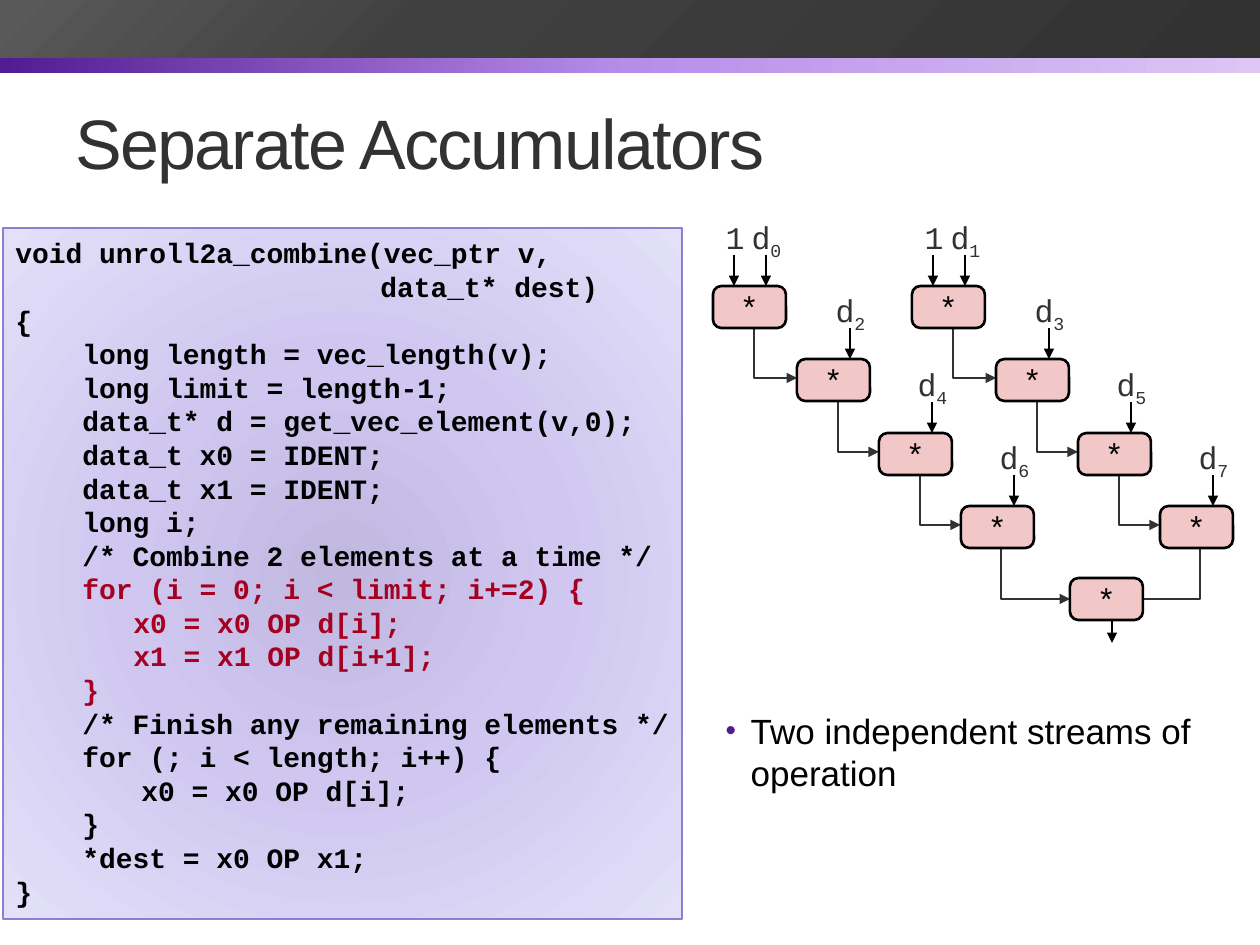
"""Build the Separate Accumulators slide with its code listing and data-flow diagram."""
from pptx import Presentation
from pptx.dml.color import RGBColor
from pptx.enum.shapes import MSO_CONNECTOR, MSO_SHAPE
from pptx.enum.text import MSO_ANCHOR, MSO_AUTO_SIZE, PP_ALIGN
from pptx.oxml import parse_xml
from pptx.oxml.ns import nsdecls
from pptx.util import Pt

PX = 914400 // 126
hex_color = RGBColor.from_string
INK, BLACK, RED = "323232", "000000", "A50021"
CODE_FONT = {"name": "Courier New", "size": Pt(16), "bold": True}
NODE_FONT = {"name": "Courier New", "size": Pt(18)}


def write(paragraph, text, color, formats):
    run = paragraph.add_run()
    run.text = text
    run.font.color.rgb = hex_color(color)
    for attribute, value in formats.items():
        setattr(run.font, attribute, value)
    return run


def add_panel(box, stops, direction):
    panel = slide.shapes.add_shape(MSO_SHAPE.RECTANGLE, *[length * PX for length in box])
    panel.shadow.inherit = False
    panel.line.fill.background()
    marks = "".join(f'<a:gs pos="{place * 1000}"><a:srgbClr val="{color}"/></a:gs>' for place, color in stops)
    gradient = f'<a:gradFill {nsdecls("a")} rotWithShape="1"><a:gsLst>{marks}</a:gsLst>{direction}</a:gradFill>'
    panel._element.spPr.insert(2, parse_xml(gradient))
    return panel


deck = Presentation()
deck.slide_width, deck.slide_height = 1260 * PX, 945 * PX
slide = deck.slides.add_slide(deck.slide_layouts[1])
title, takeaway = slide.placeholders

add_panel((0, 30, 1260, 43), [(0, "521B92"), (50, "B88DEA"), (100, "DCC6F4")], '<a:lin ang="0" scaled="0"/>')
add_panel((0, 0, 1260, 58), [(0, INK), (66, "404040"), (99, "595959")], '<a:lin ang="13500000" scaled="0"/>')

for holder, box in ((title, (63, 73, 1134, 136)), (takeaway, (713, 703, 520, 217))):
    holder.left, holder.top, holder.width, holder.height = [length * PX for length in box]
    holder.text_frame.auto_size = MSO_AUTO_SIZE.NONE
title.text_frame.vertical_anchor = MSO_ANCHOR.MIDDLE
heading = title.text_frame.paragraphs[0]
heading.alignment = PP_ALIGN.LEFT
heading_run = write(heading, "Separate Accumulators", INK, {"name": "Arial", "size": Pt(40)})
heading_run._r.get_or_add_rPr().set("spc", "-100")

point = takeaway.text_frame.paragraphs[0]
point.space_before, point.line_spacing = Pt(4), Pt(24)
write(point, "Two independent streams of operation", BLACK, {"name": "Arial", "size": Pt(20)})
bullet = point._p.get_or_add_pPr()
bullet.set("marL", str(25 * PX))
bullet.set("indent", str(-25 * PX))
for tag in ('buClr {}><a:srgbClr val="521B92"/></a:buClr>', 'buSzPct {} val="85000"/>',
            'buFont {} typeface="Arial"/>', 'buChar {} char="•"/>'):
    bullet.append(parse_xml("<a:" + tag.format(nsdecls("a"))))

code_lines = [
    (0, "void unroll2a_combine(vec_ptr v,", BLACK),
    (365, "data_t* dest)", BLACK),
    (0, "{", BLACK),
    (67, "long length = vec_length(v);", BLACK),
    (67, "long limit = length-1;", BLACK),
    (67, "data_t* d = get_vec_element(v,0);", BLACK),
    (67, "data_t x0 = IDENT;", BLACK),
    (67, "data_t x1 = IDENT;", BLACK),
    (67, "long i;", BLACK),
    (67, "/* Combine 2 elements at a time */", BLACK),
    (67, "for (i = 0; i < limit; i+=2) {", RED),
    (118, "x0 = x0 OP d[i];", RED),
    (118, "x1 = x1 OP d[i+1];", RED),
    (67, "}", RED),
    (67, "/* Finish any remaining elements */", BLACK),
    (67, "for (; i < length; i++) {", BLACK),
    (126, "x0 = x0 OP d[i];", BLACK),
    (67, "}", BLACK),
    (67, "*dest = x0 OP x1;", BLACK),
    (0, "}", BLACK),
]
listing = add_panel((3, 228, 679, 691), [(0, "C1B8E0"), (45, "CFC7F0"), (100, "E3E0F8")],
                    '<a:path path="circle"><a:fillToRect l="50000" t="50000" r="50000" b="50000"/></a:path>')
listing.line.color.rgb = hex_color("917DD0")
listing.line.width = Pt(0.75)
code = listing.text_frame
code.word_wrap = False
code.vertical_anchor = MSO_ANCHOR.TOP
code.margin_top = 8 * PX
for number, (indent, text, color) in enumerate(code_lines):
    row = code.add_paragraph() if number else code.paragraphs[0]
    row.alignment, row.line_spacing = PP_ALIGN.LEFT, Pt(19.2)
    row._p.get_or_add_pPr().set("marL", str(indent * PX))
    write(row, text, color, CODE_FONT)

NODE_W, NODE_H = 73, 42
steps = [(713, 286), (797, 359), (879, 433), (961, 506)]
result_left, result_top = 1070, 578
result_mid = result_top + NODE_H // 2
nodes, inputs, labels, elbows = [(result_left, result_top)], [(1112, 620, 643)], [], []
for stream in range(2):
    chain = [(left + 199 * stream, top) for left, top in steps]
    nodes += chain
    for step, (left, top) in enumerate(chain):
        inputs.append((left + 53, top - 31, top))
        labels.append((left + 32, top - 74, 43, "d", str(2 * step + stream)))
    first_left, first_top = chain[0]
    inputs.append((first_left + 21, first_top - 31, first_top))
    labels.append((first_left + 6, first_top - 74, 32, "1", ""))
    for (left, top), (next_left, next_top) in zip(chain, chain[1:]):
        elbows.append((left + 41, top + NODE_H, next_left, next_top + 19, True))
    last_left, last_top = chain[-1]
    entry = result_left + stream * NODE_W
    elbows.append((last_left + 40, last_top + NODE_H, entry, result_mid, stream == 0))

wires = []
for x, start, end in inputs:
    arrow = slide.shapes.add_connector(MSO_CONNECTOR.STRAIGHT, x * PX, start * PX, x * PX, end * PX)
    wires.append((arrow, BLACK, True))
for x, start, end_x, end_y, headed in elbows:
    outline = slide.shapes.build_freeform(x, start, scale=PX)
    outline.add_line_segments([(x, end_y), (end_x, end_y)], close=False)
    elbow = outline.convert_to_shape()
    elbow.fill.background()
    wires.append((elbow, INK, headed))
for wire, color, headed in wires:
    wire.line.color.rgb = hex_color(color)
    wire.line.width = Pt(1.5)
    properties = wire._element.spPr
    if headed:
        properties.get_or_add_ln().append(parse_xml(f'<a:tailEnd {nsdecls("a")} type="triangle"/>'))
    properties.append(parse_xml(f'<a:effectLst {nsdecls("a")}/>'))

for left, top in nodes:
    node = slide.shapes.add_shape(MSO_SHAPE.ROUNDED_RECTANGLE, left * PX, top * PX, NODE_W * PX, NODE_H * PX)
    node.adjustments[0] = 0.2
    node.shadow.inherit = False
    node.fill.solid()
    node.fill.fore_color.rgb = hex_color("F1C7C7")
    node.line.color.rgb = hex_color(BLACK)
    node.line.width = Pt(1.5)
    node.text_frame.word_wrap = False
    node.text_frame.vertical_anchor = MSO_ANCHOR.MIDDLE
    operator = node.text_frame.paragraphs[0]
    operator.alignment = PP_ALIGN.CENTER
    write(operator, "*", BLACK, NODE_FONT)

for left, top, width, letter, index in labels:
    label = slide.shapes.add_textbox(left * PX, top * PX, width * PX, 50 * PX).text_frame
    label.word_wrap = False
    for side in ("left", "right", "top", "bottom"):
        setattr(label, f"margin_{side}", 6 * PX)
    operand = label.paragraphs[0]
    operand.alignment = PP_ALIGN.CENTER
    write(operand, letter, INK, NODE_FONT)
    if index:
        subscript = write(operand, index, INK, NODE_FONT)
        subscript._r.get_or_add_rPr().set("baseline", "-25000")

deck.save("out.pptx")
